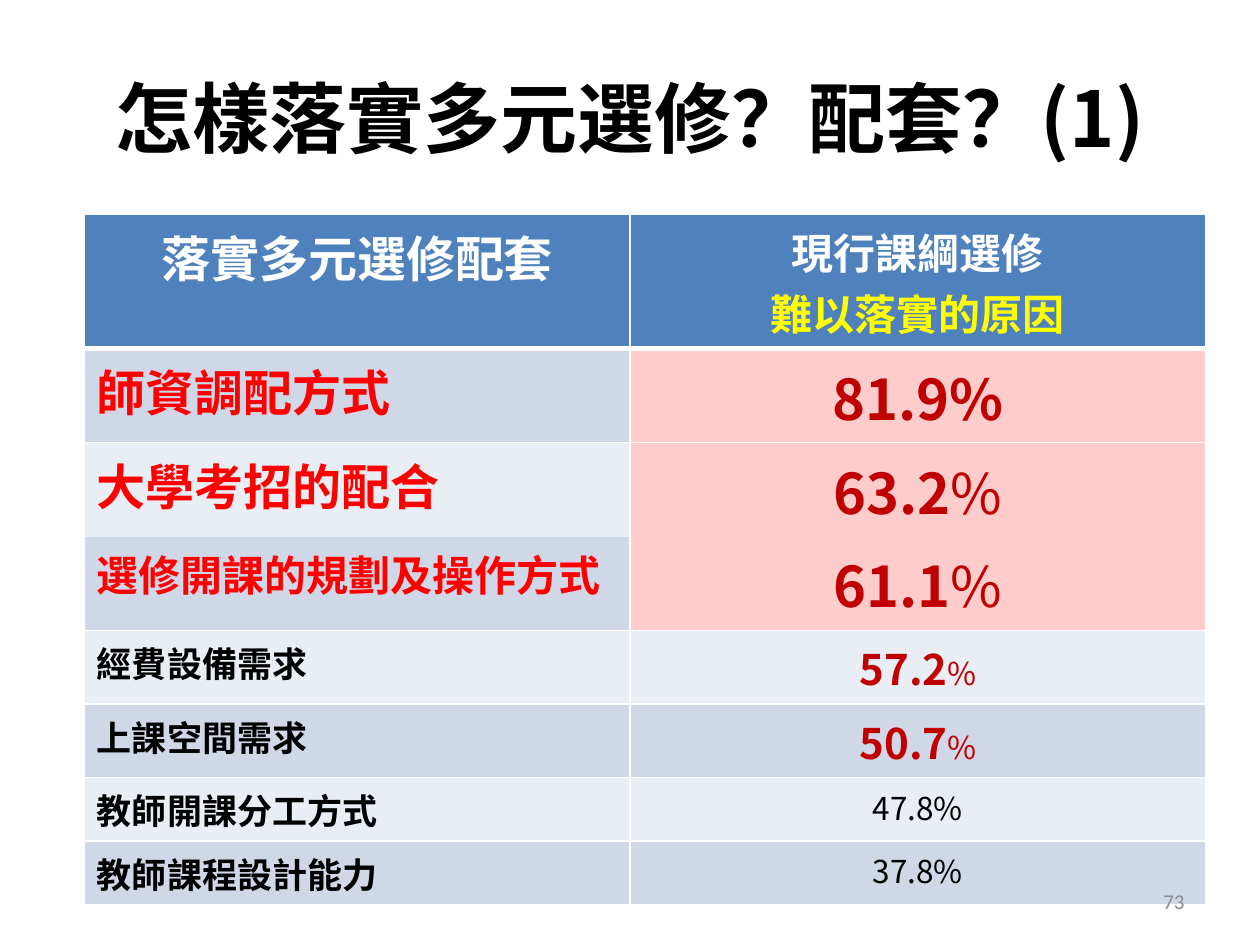
from lxml import etree
from pptx import Presentation
from pptx.dml.color import RGBColor
from pptx.enum.text import MSO_ANCHOR, PP_ALIGN
from pptx.oxml.ns import qn
from pptx.util import Cm, Pt

LEFT, CENTER, RIGHT = PP_ALIGN.LEFT, PP_ALIGN.CENTER, PP_ALIGN.RIGHT
MIDDLE = MSO_ANCHOR.MIDDLE
TITLE_ONLY = 5
CJK_FONT = "Noto Sans CJK SC"
COLORS = {
    "black": "000000", "white": "FFFFFF", "yellow": "FFFF00",
    "red": "FF0000", "dark_red": "C00000", "gray": "8C8C8C",
    "header": "4F81BD", "dark_band": "D0D8E8", "light_band": "E9EDF4",
    "pink": "FFCCCC",
}
COLUMN_WIDTHS = (11, 11.61)
ROW_HEIGHTS = (2.21, 1.83, 1.68, 1.88, 1.45, 1.45, 1.24, 1.24)
HEADERS = (
    [("落實多元選修配套", 28, "white")],
    [("現行課綱選修", 24, "white"), ("難以落實的原因", 24, "yellow")],
)
# Each row: measure, size, colour, share, size, colour, percent sign size, bold share, bold sign.
ROWS = (
    ("師資調配方式", 28, "red", "81.9", 32, "dark_red", 32, True, True),
    ("大學考招的配合", 28, "red", "63.2", 32, "dark_red", 32, True, False),
    ("選修開課的規劃及操作方式", 24, "red", "61.1", 32, "dark_red", 32, True, False),
    ("經費設備需求", 20, "black", "57.2", 24, "dark_red", 18, True, False),
    ("上課空間需求", 20, "black", "50.7", 24, "dark_red", 18, True, False),
    ("教師開課分工方式", 20, "black", "47.8", 18, "black", 18, False, False),
    ("教師課程設計能力", 20, "black", "37.8", 18, "black", 18, False, False),
)
PINK_ROWS = 3
UNRULED_ROW = 2


def style_font(font, size, color, bold=True, name=CJK_FONT):
    """Set size, colour, weight and both the Latin and East Asian typefaces."""
    font.size, font.bold, font.name = Pt(size), bold, name
    font.color.rgb = RGBColor.from_string(COLORS[color])
    etree.SubElement(font._rPr, qn("a:ea"), typeface=name)


def write_para(para, text, size, color, align, bold=True, name=CJK_FONT):
    """Fill a paragraph with text in a single style."""
    para.alignment = align
    style_font(para.font, size, color, bold, name)
    para.add_run().text = text


def write_share(para, share, size, color, sign_size, bold, sign_bold):
    """Write a percentage, splitting off its sign when that is styled apart."""
    if (size, bold) == (sign_size, sign_bold):
        write_para(para, share + "%", size, color, CENTER, bold)
        return
    para.alignment = CENTER
    for text, span_size, span_bold in ((share, size, bold), ("%", sign_size, sign_bold)):
        span = para.add_run()
        span.text = text
        style_font(span.font, span_size, color, span_bold)


def paint_cell(cell, fill, row):
    """Fill a cell and rule its white borders."""
    cell.fill.solid()
    cell.fill.fore_color.rgb = RGBColor.from_string(COLORS[fill])
    widths = {"L": 1, "R": 1, "T": 3 if row == 1 else 1, "B": 3 if row == 0 else 1}
    if row == UNRULED_ROW:
        widths["B"] = 0
    elif row == UNRULED_ROW + 1:
        widths["T"] = 0
    properties = cell._tc.get_or_add_tcPr()
    for index, (side, width) in enumerate(widths.items()):
        line = etree.Element(qn(f"a:ln{side}"), w=str(Pt(width)))
        if width:
            paint = etree.SubElement(line, qn("a:solidFill"))
            etree.SubElement(paint, qn("a:srgbClr"), val=COLORS["white"])
        else:
            etree.SubElement(line, qn("a:noFill"))
        properties.insert(index, line)


def place_title(page, box):
    """Put the slide title in the given box."""
    title = page.shapes.title
    title.left, title.top, title.width, title.height = box
    title.text_frame.vertical_anchor = MIDDLE
    write_para(title.text_frame.paragraphs[0], "怎樣落實多元選修？配套？(1)", 44, "black", CENTER)


def place_table(page, box):
    """Put the table of measures and shares in the given box."""
    table = page.shapes.add_table(len(ROW_HEIGHTS), len(COLUMN_WIDTHS), *box).table
    for column, width in zip(table.columns, COLUMN_WIDTHS):
        column.width = Cm(width)
    for row, height in zip(table.rows, ROW_HEIGHTS):
        row.height = Cm(height)
    for column, lines in enumerate(HEADERS):
        cell = table.cell(0, column)
        paint_cell(cell, "header", 0)
        for index, (text, size, color) in enumerate(lines):
            frame = cell.text_frame
            para = frame.add_paragraph() if index else frame.paragraphs[0]
            write_para(para, text, size, color, CENTER)
    for row, (measure, size, color, *share) in enumerate(ROWS, start=1):
        band = "dark_band" if row % 2 else "light_band"
        name_cell, share_cell = table.cell(row, 0), table.cell(row, 1)
        paint_cell(name_cell, band, row)
        paint_cell(share_cell, "pink" if row <= PINK_ROWS else band, row)
        write_para(name_cell.text_frame.paragraphs[0], measure, size, color, LEFT)
        write_share(share_cell.text_frame.paragraphs[0], *share)


def place_page_number(page, box):
    """Put the page number in the given box."""
    frame = page.shapes.add_textbox(*box).text_frame
    frame.word_wrap = True
    frame.vertical_anchor = MIDDLE
    write_para(frame.paragraphs[0], "73", 12, "gray", RIGHT, False, "Calibri")


def main():
    """Build the slide and save the deck."""
    deck = Presentation()
    deck.slide_width, deck.slide_height = Cm(25.4), Cm(19.05)
    page = deck.slides.add_slide(deck.slide_layouts[TITLE_ONLY])
    place_title(page, (Cm(1.27), Cm(0.76), Cm(22.86), Cm(3.18)))
    place_table(page, (Cm(1.7), Cm(4.32), Cm(22.61), Cm(13.08)))
    place_page_number(page, (Cm(18.21), Cm(17.65), Cm(5.92), Cm(1.02)))
    deck.save("out.pptx")


if __name__ == "__main__":
    main()
